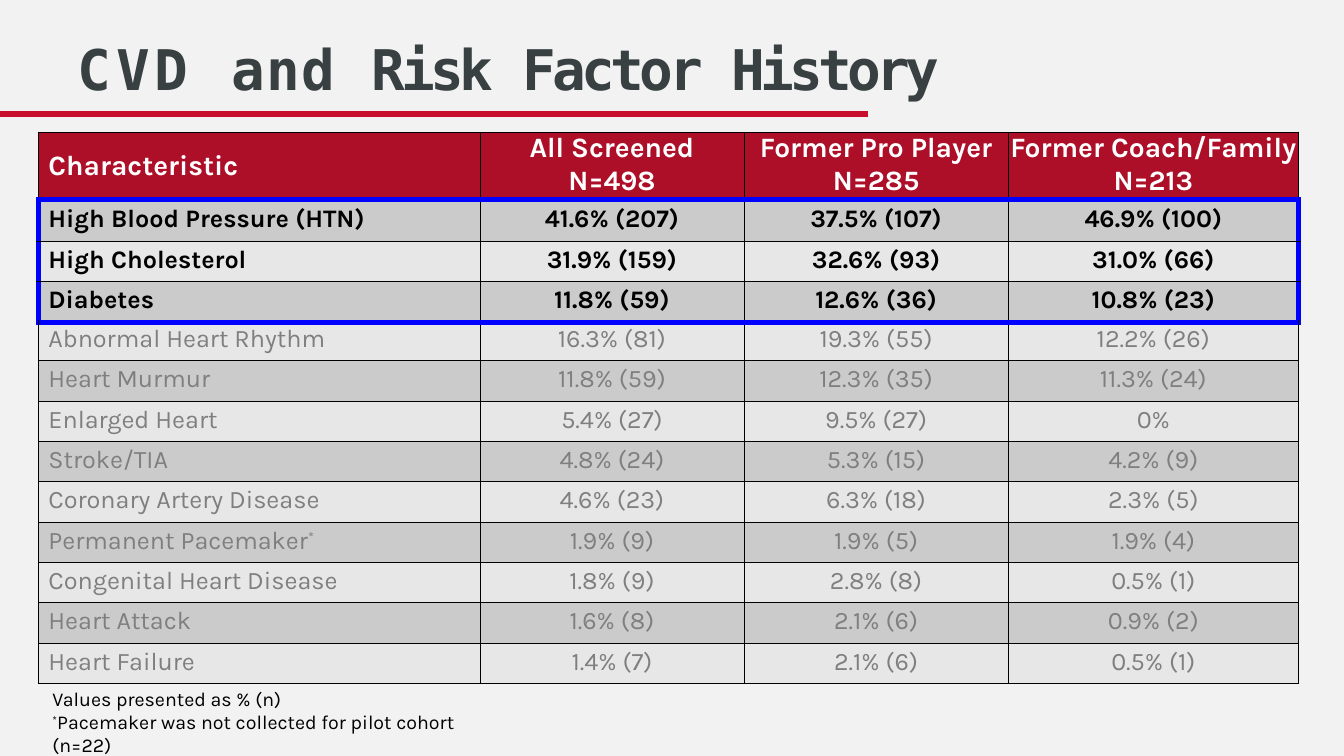
from lxml import etree
from pptx import Presentation
from pptx.dml.color import RGBColor
from pptx.enum.shapes import MSO_CONNECTOR
from pptx.enum.text import MSO_ANCHOR, PP_ALIGN
from pptx.oxml.ns import qn
from pptx.util import Inches, Pt

LEFT, CENTER = PP_ALIGN.LEFT, PP_ALIGN.CENTER
TOP, MIDDLE = MSO_ANCHOR.TOP, MSO_ANCHOR.MIDDLE
STRAIGHT = MSO_CONNECTOR.STRAIGHT
PAPER = RGBColor(0xF2, 0xF2, 0xF2)
RED = RGBColor(0xC8, 0x10, 0x2E)
WINE = RGBColor(0xAD, 0x0E, 0x28)
SLATE = RGBColor(0x38, 0x40, 0x42)
DARK = RGBColor(0xCB, 0xCB, 0xCB)
LIGHT = RGBColor(0xE7, 0xE7, 0xE7)
GRAY = RGBColor(0x7F, 0x7F, 0x7F)
BLUE = RGBColor(0x00, 0x00, 0xFF)
BLACK = RGBColor(0x00, 0x00, 0x00)
WHITE = RGBColor(0xFF, 0xFF, 0xFF)

TITLE = [("CVD ", 3.5), ("and ", 0.9), ("Risk ", -3.1), ("Factor ", -3.2), ("History", -3.4)]
NOTES = ["Values presented as % (n)", "*Pacemaker was not collected for pilot cohort (n=22)"]
COLS = [4.38, 2.62, 2.62, 2.88]
ROWS = [0.67, 0.41, 0.4, 0.41, 0.38] + [0.4] * 8
INSETS = {1: 0.05, 4: 0.02}
FOCUS = (1, 3)
DATA = [
    ("Characteristic", "All Screened\nN=498", "Former Pro Player\nN=285", "Former Coach/Family\nN=213"),
    ("High Blood Pressure (HTN)", "41.6% (207)", "37.5% (107)", "46.9% (100)"),
    ("High Cholesterol", "31.9% (159)", "32.6% (93)", "31.0% (66)"),
    ("Diabetes", "11.8% (59)", "12.6% (36)", "10.8% (23)"),
    ("Abnormal Heart Rhythm", "16.3% (81)", "19.3% (55)", "12.2% (26)"),
    ("Heart Murmur", "11.8% (59)", "12.3% (35)", "11.3% (24)"),
    ("Enlarged Heart", "5.4% (27)", "9.5% (27)", "0%"),
    ("Stroke/TIA", "4.8% (24)", "5.3% (15)", "4.2% (9)"),
    ("Coronary Artery Disease", "4.6% (23)", "6.3% (18)", "2.3% (5)"),
    ("Permanent Pacemaker*", "1.9% (9)", "1.9% (5)", "1.9% (4)"),
    ("Congenital Heart Disease", "1.8% (9)", "2.8% (8)", "0.5% (1)"),
    ("Heart Attack", "1.6% (8)", "2.1% (6)", "0.9% (2)"),
    ("Heart Failure", "1.4% (7)", "2.1% (6)", "0.5% (1)"),
]


class Board:
    mono, sans = "DejaVu Sans Mono", "Karla"

    def __init__(self, deck):
        self.slide = deck.slides.add_slide(deck.slide_layouts[6])
        fill = self.slide.background.fill
        fill.solid()
        fill.fore_color.rgb = PAPER

    def style(self, para, face, size, color, bold=False):
        font = para.font
        font.name, font.size, font.bold = face, Pt(size), bold
        font.color.rgb = color

    def words(self, para, text):
        for index, part in enumerate(text.split("*")):
            if index:
                star = para.add_run()
                star.text = "*"
                star.font._element.set("baseline", "25000")
            if part:
                para.add_run().text = part

    def box(self, left, top, width, height):
        frame = self.slide.shapes.add_textbox(
            Inches(left), Inches(top), Inches(width), Inches(height)).text_frame
        frame.word_wrap = True
        frame.margin_left = frame.margin_right = frame.margin_bottom = 0
        frame.margin_top = Inches(0.01)
        return frame

    def title(self, parts):
        para = self.box(0.77, 0.33, 12.29, 0.7).paragraphs[0]
        for text, gap in parts:
            run = para.add_run()
            run.text = text
            run.font._element.set("spc", str(round(gap * 100)))
        self.style(para, self.mono, 40, SLATE, True)

    def notes(self, lines):
        frame = self.box(0.52, 6.81, 4.55, 0.68)
        for index, text in enumerate(lines):
            para = frame.add_paragraph() if index else frame.paragraphs[0]
            para.line_spacing = Pt(16.4)
            self.words(para, text)
            self.style(para, self.sans, 14, BLACK)

    def rule(self, top, width):
        line = self.slide.shapes.add_connector(
            STRAIGHT, 0, Inches(top), Inches(width), Inches(top))
        line.line.color.rgb, line.line.width = RED, Pt(4)
        etree.SubElement(line._element.spPr, qn("a:effectLst"))

    def edges(self, cell, row, col):
        first, last = FOCUS
        inside = first <= row <= last
        thick = {
            "L": inside and col == 0,
            "R": inside and col == len(COLS) - 1,
            "T": row in (first, last + 1),
            "B": row in (first - 1, last),
        }
        props = cell._tc.get_or_add_tcPr()
        for side, bold in thick.items():
            edge = etree.SubElement(props, qn("a:ln" + side), w=str(Pt(4.5 if bold else 0.5)))
            fill = etree.SubElement(edge, qn("a:solidFill"))
            etree.SubElement(fill, qn("a:srgbClr"), val=str(BLUE if bold else BLACK))

    def cell(self, cell, row, col, text):
        head = row == 0
        self.edges(cell, row, col)
        cell.fill.solid()
        cell.fill.fore_color.rgb = WINE if head else DARK if row % 2 else LIGHT
        cell.margin_left = Inches(0 if col else 0.1)
        cell.margin_right = cell.margin_bottom = 0
        cell.margin_top = Inches(0 if head else INSETS.get(row, 0.04))
        cell.vertical_anchor = MIDDLE if head and col == 0 else TOP
        bold = row <= FOCUS[1]
        color = WHITE if head else BLACK if bold else GRAY
        for index, line in enumerate(text.split("\n")):
            para = cell.text_frame.add_paragraph() if index else cell.text_frame.paragraphs[0]
            para.alignment = CENTER if col else LEFT
            if head and col:
                para.line_spacing = Pt(24 if index else 23)
            self.words(para, line)
            self.style(para, self.sans, 20 if head else 18, color, bold)

    def table(self, left, top, data):
        grid = self.slide.shapes.add_table(
            len(ROWS), len(COLS), Inches(left), Inches(top),
            Inches(sum(COLS)), Inches(sum(ROWS))).table
        for col, width in zip(grid.columns, COLS):
            col.width = Inches(width)
        for row, height in zip(grid.rows, ROWS):
            row.height = Inches(height)
        for row, texts in enumerate(data):
            for col, text in enumerate(texts):
                self.cell(grid.cell(row, col), row, col, text)


def main():
    deck = Presentation()
    deck.slide_width, deck.slide_height = Inches(13.33), Inches(7.5)
    board = Board(deck)
    board.rule(1.13, 8.61)
    board.title(TITLE)
    board.table(0.38, 1.31, DATA)
    board.notes(NOTES)
    deck.save("out.pptx")


if __name__ == "__main__":
    main()
